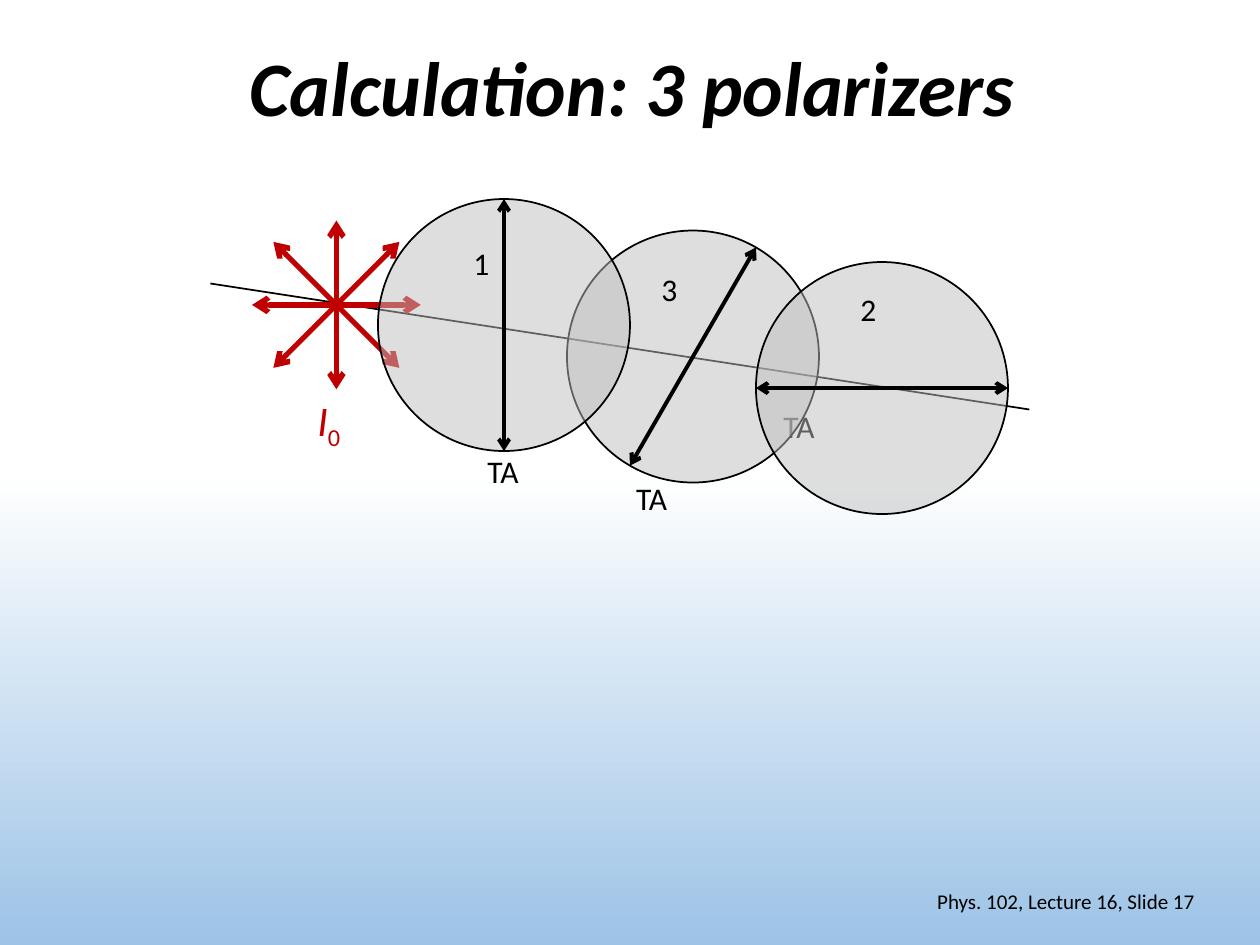
import math

from lxml import etree
from pptx import Presentation
from pptx.dml.color import RGBColor
from pptx.enum import shapes, text
from pptx.oxml.ns import qn
from pptx.util import Inches, Pt

BLACK = RGBColor(0x00, 0x00, 0x00)
WHITE = RGBColor(0xFF, 0xFF, 0xFF)
SKY = RGBColor(0x9D, 0xC3, 0xE6)
RED = RGBColor(0xC0, 0x00, 0x00)
GREY = RGBColor(0xBF, 0xBF, 0xBF)

RADIUS = 1


def apply_format(target, values):
    for name, value in values.items():
        setattr(target, name, value)


def set_background(slide):
    fill = slide.background.fill
    fill.gradient()
    fill.gradient_angle = 270
    for stop, position, color in zip(fill.gradient_stops, (0.5, 1), (WHITE, SKY)):
        stop.position = position
        stop.color.rgb = color


def add_run(paragraph, words, size, color=BLACK, **font_format):
    run = paragraph.add_run()
    run.text = words
    apply_format(run.font, {"name": "Calibri", "size": Pt(size), **font_format})
    run.font.color.rgb = color
    return run


def set_title(slide, words):
    title = slide.shapes.title
    apply_format(title, {"left": Inches(0.71), "top": Inches(0),
                         "width": Inches(8.62), "height": Inches(1.45)})
    title.text_frame.vertical_anchor = text.MSO_ANCHOR.MIDDLE
    paragraph = title.text_frame.paragraphs[0]
    apply_format(paragraph, {"alignment": text.PP_ALIGN.CENTER, "line_spacing": 0.9})
    add_run(paragraph, words, 44, bold=True, italic=True)


def add_label(slide, words, left, top, width, height=0.4, size=18, wrap=False, **font_format):
    box = slide.shapes.add_textbox(*map(Inches, (left, top, width, height)))
    apply_format(box.text_frame, {"word_wrap": wrap,
                                  "auto_size": text.MSO_AUTO_SIZE.SHAPE_TO_FIT_TEXT})
    paragraph = box.text_frame.paragraphs[0]
    add_run(paragraph, words, size, **font_format)
    return paragraph


def add_line(container, start, end, color=BLACK, weight=1, arrows=False):
    line = container.add_connector(shapes.MSO_CONNECTOR.STRAIGHT, *map(Inches, (*start, *end)))
    line.line.color.rgb = color
    line.line.width = Pt(weight)
    if arrows:
        outline = line.line._get_or_add_ln()
        for tag in ("a:headEnd", "a:tailEnd"):
            etree.SubElement(outline, qn(tag), type="arrow")
    etree.SubElement(line._element.spPr, qn("a:effectLst"))


def add_double_arrow(container, center, offset, **line_format):
    (x, y), (dx, dy) = center, offset
    add_line(container, (x - dx, y - dy), (x + dx, y + dy), arrows=True, **line_format)


def add_unpolarized_light(slide, center):
    group = slide.shapes.add_group_shape().shapes
    for offset in ((0, 0.67), (0.67, 0), (0.5, 0.5), (0.5, -0.5)):
        add_double_arrow(group, center, offset, color=RED, weight=3)


def add_polarizer(slide, center, axis_angle):
    group = slide.shapes.add_group_shape().shapes
    x, y = center
    disc = group.add_shape(shapes.MSO_SHAPE.OVAL, Inches(x - RADIUS), Inches(y - RADIUS),
                           Inches(2 * RADIUS), Inches(2 * RADIUS))
    disc.shadow.inherit = False
    disc.fill.solid()
    disc.fill.fore_color.rgb = GREY
    color = disc._element.spPr.find(qn("a:solidFill"))[0]
    etree.SubElement(color, qn("a:alpha"), val="50000")
    disc.line.color.rgb = BLACK
    disc.line.width = Pt(1)
    # Transmission axis, measured from the horizontal
    angle = math.radians(axis_angle)
    offset = (RADIUS * math.cos(angle), -RADIUS * math.sin(angle))
    add_double_arrow(group, center, offset, weight=2.25)


def main():
    presentation = Presentation()
    presentation.slide_width, presentation.slide_height = Inches(10), Inches(7.5)
    slide = presentation.slides.add_slide(presentation.slide_layouts[5])
    set_background(slide)
    set_title(slide, "Calculation: 3 polarizers")

    # Beam and the labels behind the polarizers
    add_line(slide.shapes, (1.67, 2.25), (8.17, 3.25))
    add_label(slide, "TA", 6.12, 3.18, 0.5, wrap=True)
    add_label(slide, "TA", 3.77, 3.54, 0.45)

    # Light source and polarizers, back to front
    add_unpolarized_light(slide, (2.67, 2.42))
    for center, axis_angle in (((5.5, 2.83), 60), ((4, 2.58), 90), ((7, 3.08), 0)):
        add_polarizer(slide, center, axis_angle)

    # Labels in front
    intensity = add_label(slide, "I", 2.42, 3.08, 0.4, 0.5, size=24, color=RED, italic=True)
    subscript = add_run(intensity, "0", 24, RED, italic=False)
    subscript.font._element.set("baseline", "-25000")
    add_label(slide, "TA", 4.95, 3.75, 0.5, wrap=True)
    for number, left, top in (("1", 3.66, 1.89), ("3", 5.15, 2.09), ("2", 6.73, 2.25)):
        add_label(slide, number, left, top, 0.33)

    # Footer
    footer = slide.shapes.add_textbox(*map(Inches, (7.06, 6.95, 2.52, 0.4)))
    apply_format(footer.text_frame, {"word_wrap": True,
                                     "vertical_anchor": text.MSO_ANCHOR.MIDDLE})
    paragraph = footer.text_frame.paragraphs[0]
    paragraph.alignment = text.PP_ALIGN.RIGHT
    add_run(paragraph, "Phys. 102, Lecture 16, Slide 17", 12)

    presentation.save("out.pptx")


if __name__ == "__main__":
    main()
